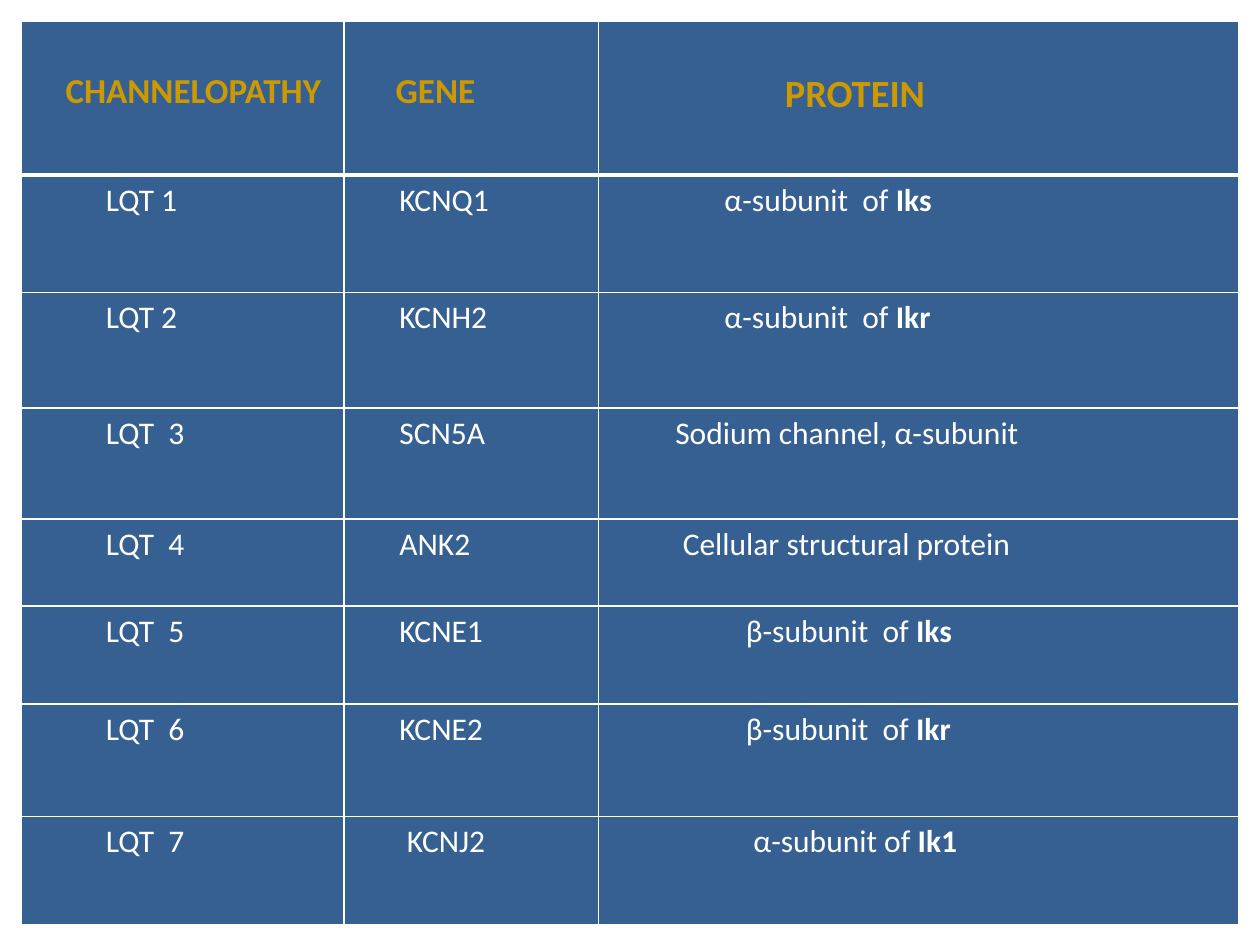
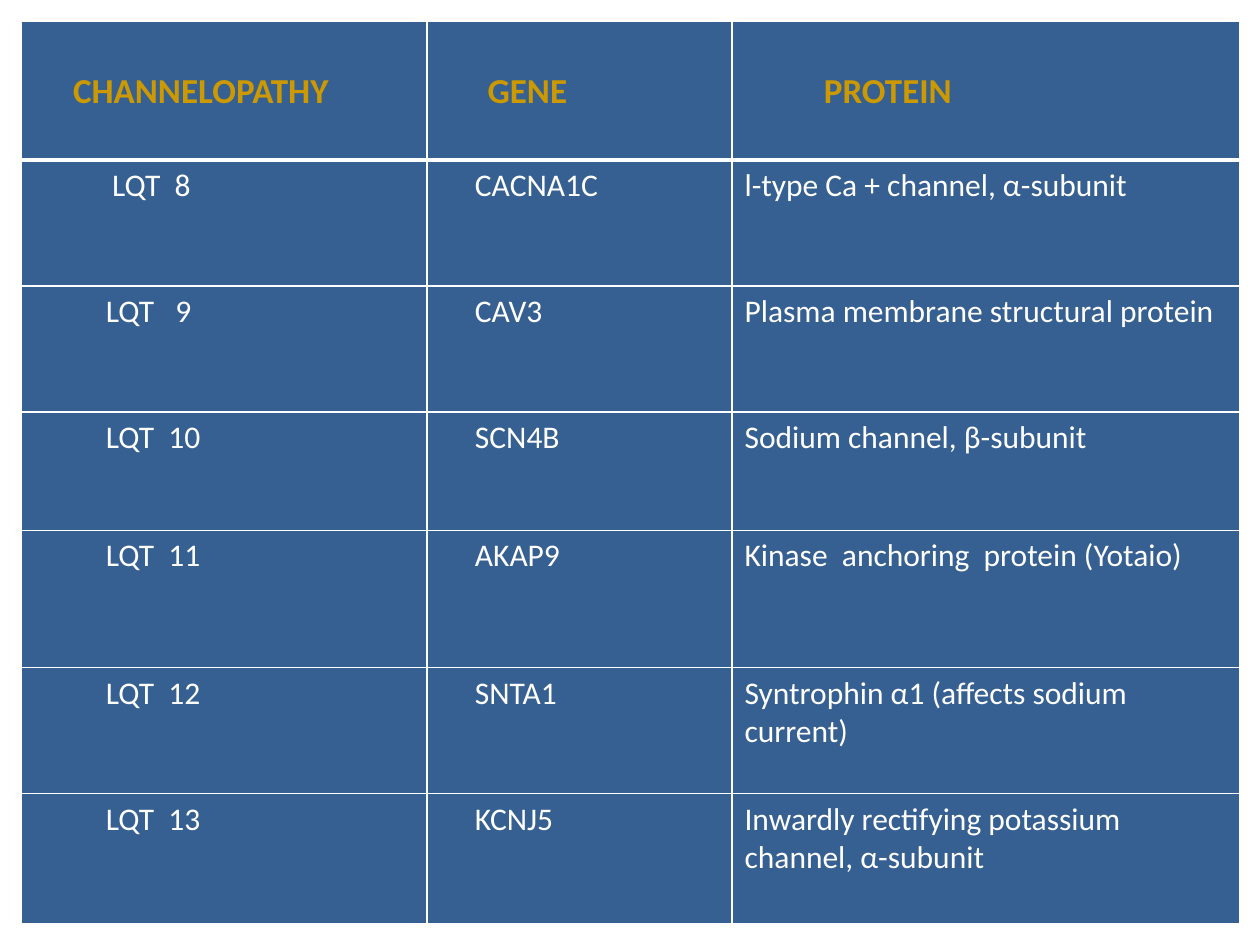
"""Build two table slides that map long QT channelopathies to genes and proteins."""
from dataclasses import dataclass
from typing import NamedTuple

from lxml import etree
from pptx import Presentation
from pptx import util as u
from pptx.dml import color
from pptx.oxml import ns


@dataclass(frozen=True)
class Theme:
    font: str = "Calibri"
    fill: str = "376092"
    line: str = "FFFFFF"
    body: str = "FFFFFF"
    head: str = "CC9900"
    body_size: int = 18
    head_size: int = 20
    big_size: int = 22
    thin: int = 1
    thick: int = 3
    edge: float = 0.17
    top: float = 0.05
    head_top: float = 0.39


class Term(NamedTuple):
    text: str
    inset: float = 0.1
    tail: str = ""
    size: int = 0


class Row(NamedTuple):
    height: float
    terms: tuple[Term, Term, Term]


class Grid(NamedTuple):
    widths: tuple[float, ...]
    rows: list[Row]


THEME = Theme()


def lqt(label: str, inset: float = 0.67) -> Term:
    return Term(f"LQT {label}", inset)


def head(height: float, insets: tuple[float, ...], size: int) -> Row:
    names = "CHANNELOPATHY", "GENE", "PROTEIN"
    sizes = THEME.head_size, THEME.head_size, size
    return Row(height, tuple(Term(n, i, size=s) for n, i, s in zip(names, insets, sizes)))


def gene(name: str, inset: float = 0.44) -> Term:
    return Term(name, inset)


def late(name: str) -> Term:
    return gene(name, 0.38)


GRIDS = [
    Grid((2.56, 2.02, 5.08), [
        head(1.22, (0.35, 0.41, 1.48), THEME.big_size),
        Row(0.93, (lqt("1"), gene("KCNQ1"), Term("α-subunit  of ", 1, "Iks"))),
        Row(0.92, (lqt("2"), gene("KCNH2"), Term("α-subunit  of ", 1, "Ikr"))),
        Row(0.88, (lqt(" 3"), gene("SCN5A"), Term("Sodium channel, α-subunit", 0.61))),
        Row(0.69, (lqt(" 4"), gene("ANK2"), Term("Cellular structural protein", 0.67))),
        Row(0.78, (lqt(" 5"), gene("KCNE1"), Term("β-subunit  of ", 1.17, "Iks"))),
        Row(0.89, (lqt(" 6"), gene("KCNE2"), Term("β-subunit  of ", 1.17, "Ikr"))),
        Row(0.86, (lqt(" 7"), gene("KCNJ2", 0.5), Term("α-subunit of ", 1.23, "Ik1"))),
    ]),
    Grid((3.22, 2.42, 4.03), [
        head(1.1, (0.41, 0.48, 0.73), THEME.head_size),
        Row(1, (lqt(" 8", 0.72), late("CACNA1C"), Term("l-type Ca + channel, α-subunit"))),
        Row(1, (lqt("  9"), late("CAV3"), Term("Plasma membrane structural protein"))),
        Row(0.94, (lqt(" 10"), late("SCN4B"), Term("Sodium channel, β-subunit"))),
        Row(1.09, (lqt(" 11"), late("AKAP9"), Term("Kinase  anchoring  protein (Yotaio)"))),
        Row(1, (lqt(" 12"), late("SNTA1"), Term("Syntrophin α1 (affects sodium current)"))),
        Row(1.03, (lqt(" 13"), late("KCNJ5"),
                   Term("Inwardly rectifying potassium channel, α-subunit"))),
    ]),
]


def rule(cell, side: str, width: int) -> None:
    line = etree.SubElement(cell._tc.get_or_add_tcPr(), ns.qn(f"a:ln{side}"), w=str(u.Pt(width)))
    fill = etree.SubElement(line, ns.qn("a:solidFill"))
    etree.SubElement(fill, ns.qn("a:srgbClr"), val=THEME.line)


def write(cell, term: Term, is_head: bool) -> None:
    parts = [(term.text, is_head), (term.tail, True)]
    for text, bold in parts:
        if not text:
            continue
        run = cell.text_frame.paragraphs[0].add_run()
        run.text = text
        style = {"name": THEME.font, "bold": bold, "size": u.Pt(term.size or THEME.body_size)}
        for key, value in style.items():
            setattr(run.font, key, value)
        shade = THEME.head if is_head else THEME.body
        run.font.color.rgb = color.RGBColor.from_string(shade)


def draw_cell(cell, term: Term, index: int) -> None:
    is_head = index == 0
    widths = {"L": THEME.thin, "R": THEME.thin,
              "T": THEME.thick if index == 1 else THEME.thin,
              "B": THEME.thick if is_head else THEME.thin}
    for side, width in widths.items():
        rule(cell, side, width)
    cell.fill.solid()
    cell.fill.fore_color.rgb = color.RGBColor.from_string(THEME.fill)
    margins = {"margin_left": term.inset, "margin_right": 0.1 if index else 0.05,
               "margin_top": THEME.head_top if is_head else THEME.top}
    for key, value in margins.items():
        setattr(cell, key, u.Inches(value))
    write(cell, term, is_head)


def draw_grid(slide, grid: Grid) -> None:
    size = sum(grid.widths), sum(row.height for row in grid.rows)
    box = [u.Inches(value) for value in (THEME.edge, THEME.edge, *size)]
    table = slide.shapes.add_table(len(grid.rows), len(grid.widths), *box).table
    table.horz_banding = False
    for column, width in zip(table.columns, grid.widths):
        column.width = u.Inches(width)
    for index, row in enumerate(grid.rows):
        table.rows[index].height = u.Inches(row.height)
        for place, term in enumerate(row.terms):
            draw_cell(table.cell(index, place), term, index)


def main() -> None:
    deck = Presentation()
    deck.slide_width, deck.slide_height = u.Inches(10), u.Inches(7.5)
    for grid in GRIDS:
        draw_grid(deck.slides.add_slide(deck.slide_layouts[6]), grid)
    deck.save("out.pptx")


if __name__ == "__main__":
    main()
